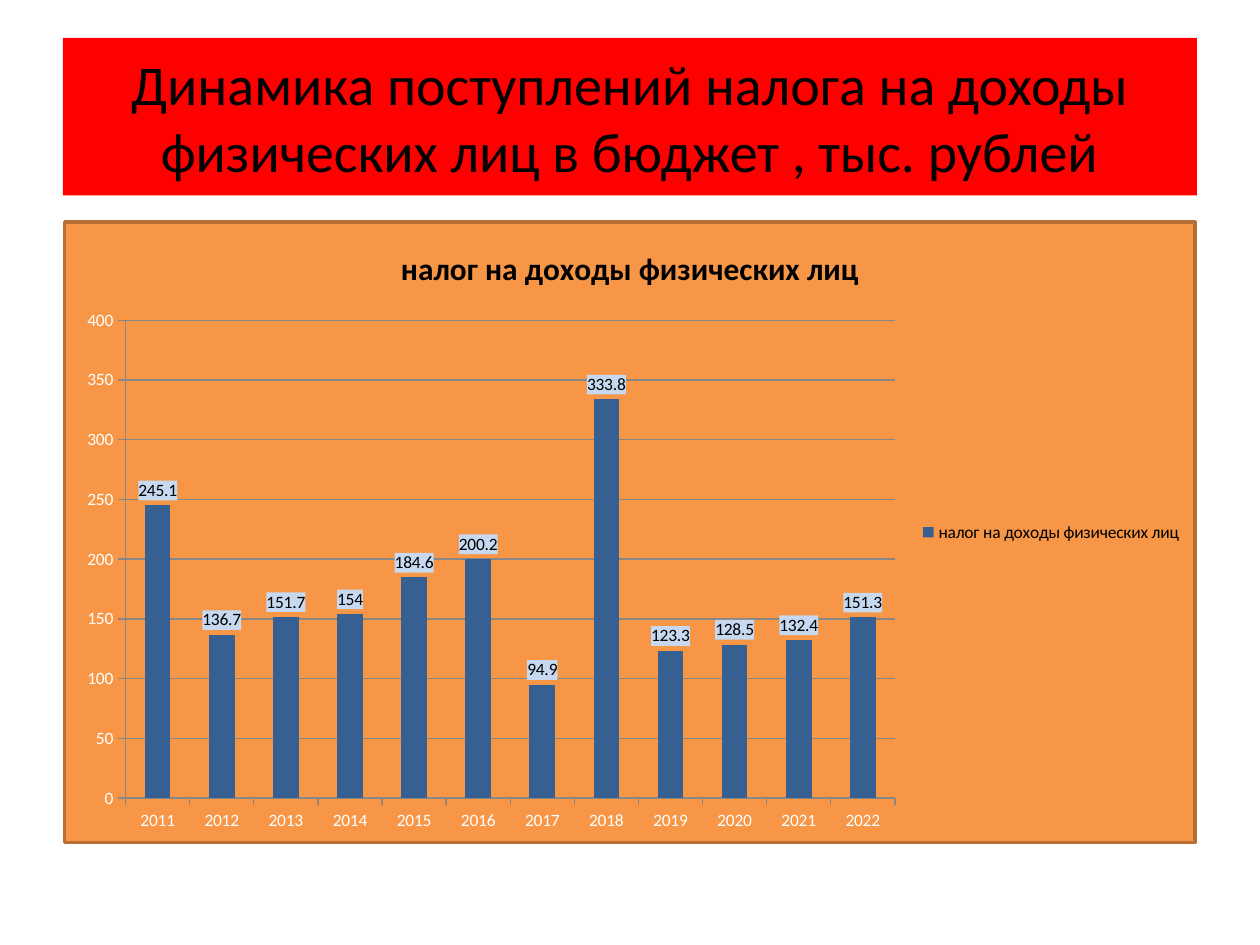
import pptx
import pptx.chart.data
import pptx.dml.color
import pptx.enum.chart
import pptx.enum.shapes
import pptx.enum.text
import pptx.oxml
import pptx.oxml.ns
import pptx.util

Pt = pptx.util.Pt
RGBColor = pptx.dml.color.RGBColor
RED = RGBColor(0xFF, 0x00, 0x00)
BLACK = RGBColor(0x00, 0x00, 0x00)
WHITE = RGBColor(0xFF, 0xFF, 0xFF)
ORANGE = RGBColor(0xF7, 0x96, 0x46)
BROWN = RGBColor(0xB7, 0x6F, 0x34)
BLUE = RGBColor(0x37, 0x60, 0x92)
PALE_BLUE = RGBColor(0xC6, 0xD9, 0xF1)
GRAY = RGBColor(0x87, 0x87, 0x87)
FONT = "Calibri"
TAX = "налог на доходы физических лиц"
RECEIPTS = [245.1, 136.7, 151.7, 154, 184.6, 200.2,
            94.9, 333.8, 123.3, 128.5, 132.4, 151.3]


def area_format(fill, border=None):
    """Return a c:spPr element with a solid fill and an optional 2 pt border."""
    line = (f'<a:ln w="{Pt(2)}"><a:solidFill><a:srgbClr val="{border}"/></a:solidFill></a:ln>'
            if border else "")
    return pptx.oxml.parse_xml(
        f'<c:spPr {pptx.oxml.ns.nsdecls("c", "a")}><a:solidFill>'
        f'<a:srgbClr val="{fill}"/></a:solidFill>{line}</c:spPr>')


deck = pptx.Presentation()
deck.slide_width, deck.slide_height = Pt(720), Pt(540)
slide = deck.slides.add_slide(deck.slide_layouts[6])

# Heading
heading = slide.shapes.add_shape(
    pptx.enum.shapes.MSO_SHAPE.RECTANGLE, Pt(36), Pt(21.6), Pt(648), Pt(90))
heading.shadow.inherit = False
heading.fill.solid()
heading.fill.fore_color.rgb = RED
heading.line.fill.background()
heading.text_frame.word_wrap = True
heading.text_frame.vertical_anchor = pptx.enum.text.MSO_ANCHOR.MIDDLE
heading_line = heading.text_frame.paragraphs[0]
heading_line.text = "Динамика поступлений налога на доходы физических лиц в бюджет , тыс. рублей"
heading_line.alignment = pptx.enum.text.PP_ALIGN.CENTER
heading_line.font.name = FONT
heading_line.font.size = Pt(32)
heading_line.font.color.rgb = BLACK

# Receipts by year
receipts = pptx.chart.data.CategoryChartData()
receipts.categories = [str(year) for year in range(2011, 2023)]
receipts.add_series(TAX, RECEIPTS)
chart = slide.shapes.add_chart(
    pptx.enum.chart.XL_CHART_TYPE.COLUMN_CLUSTERED,
    Pt(36), Pt(126), Pt(648), Pt(356.4), receipts).chart
chart.font.name = FONT
chart.font.size = Pt(10)
chart.font.color.rgb = WHITE
chart.element.find(pptx.oxml.ns.qn("c:chart")).addnext(area_format(ORANGE, BROWN))

chart.has_title = True
chart_title = chart.chart_title.text_frame.paragraphs[0]
chart_title.text = TAX
chart_title.font.name = FONT
chart_title.font.size = Pt(18)
chart_title.font.bold = True
chart_title.font.color.rgb = BLACK

chart.has_legend = True
chart.legend.position = pptx.enum.chart.XL_LEGEND_POSITION.RIGHT
chart.legend.include_in_layout = False
chart.legend.font.size = Pt(10)
chart.legend.font.color.rgb = BLACK

for axis in (chart.category_axis, chart.value_axis):
    axis.major_tick_mark = pptx.enum.chart.XL_TICK_MARK.OUTSIDE
    axis.format.line.color.rgb = GRAY
    axis.format.line.width = Pt(0.75)
chart.value_axis.minimum_scale = 0
chart.value_axis.maximum_scale = 400
chart.value_axis.major_unit = 50
chart.value_axis.has_major_gridlines = True
chart.value_axis.major_gridlines.format.line.color.rgb = GRAY
chart.value_axis.major_gridlines.format.line.width = Pt(0.75)

columns = chart.plots[0]
columns.vary_by_categories = False
columns.gap_width = 150
columns.series[0].format.fill.solid()
columns.series[0].format.fill.fore_color.rgb = BLUE

labels = columns.series[0].data_labels
labels.show_value = True
labels.position = pptx.enum.chart.XL_LABEL_POSITION.OUTSIDE_END
labels.font.size = Pt(10)
labels.font.color.rgb = BLACK
labels.font.fill.solid()
labels.font.color.rgb = BLACK
label_text = columns.series[0].format.fill and chart.element.find(
    ".//" + pptx.oxml.ns.qn("c:dLbls") + "/" + pptx.oxml.ns.qn("c:txPr"))
label_text.addprevious(area_format(PALE_BLUE))

deck.save("out.pptx")
